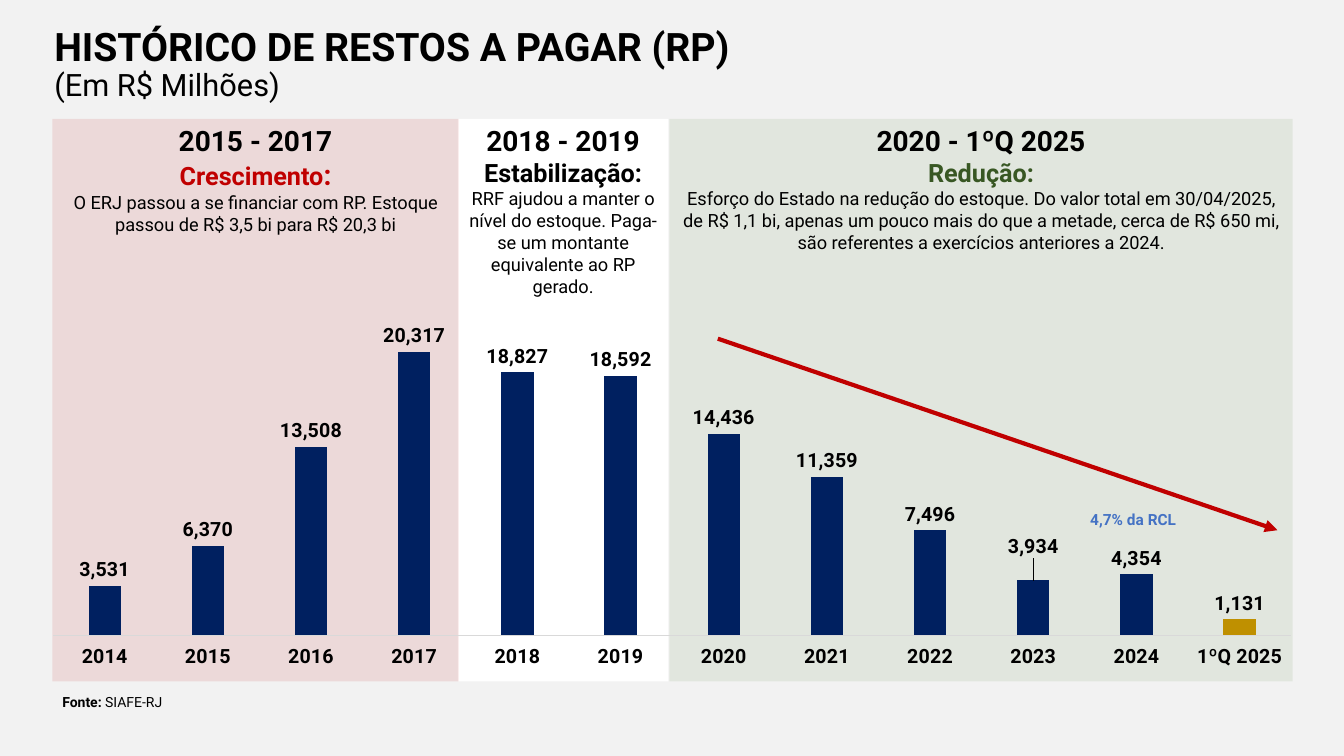
from lxml import etree
from pptx import Presentation
from pptx.chart.data import CategoryChartData
from pptx.dml.color import RGBColor
from pptx.enum.chart import XL_CHART_TYPE as Chart, XL_LABEL_POSITION as LabelPos, XL_TICK_MARK as Tick
from pptx.enum.chart import XL_TICK_LABEL_POSITION as TickPos
from pptx.enum.shapes import MSO_CONNECTOR as Conn, MSO_SHAPE as Shape
from pptx.enum.text import MSO_ANCHOR as Anchor, PP_ALIGN as Align
from pptx.oxml import parse_xml
from pptx.oxml.ns import nsdecls, qn
from pptx.util import Inches, Pt

FONT = "Roboto"
COLORS = {"back": "F2F2F2", "black": "000000", "white": "FFFFFF", "green": "548235",
          "dark_green": "385723", "red": "C00000", "navy": "002060", "gold": "BF9000",
          "blue": "4472C4", "axis": "D9D9D9"}

PANEL_TOP, PANEL_HEIGHT = 1.18, 5.58
PANELS = [
    dict(left=6.64, width=6.18, fill="green", alpha=10, period="2020 - 1ºQ 2025",
         heading=[("Redução:", 18)], color="dark_green",
         body="Esforço do Estado na redução do estoque. Do valor total em 30/04/2025, de R$ 1,1 bi, "
              "apenas um pouco mais do que a metade, cerca de R$ 650 mi, são referentes a "
              "exercícios anteriores a 2024."),
    dict(left=4.54, width=2.09, fill="white", alpha=100, period="2018 - 2019",
         heading=[("Estabilização:", 18)], color="black",
         body="RRF ajudou a manter o nível do estoque. Paga-se um montante equivalente ao RP gerado."),
    dict(left=0.52, width=4.03, fill="red", alpha=10, period="2015 - 2017",
         heading=[("Crescimento", 18), (":", 20)], color="red",
         body="O ERJ passou a se financiar com RP. Estoque passou de R$ 3,5 bi para R$ 20,3 bi"),
]
TITLE = [("HISTÓRICO DE RESTOS A PAGAR (RP)", 28, True), ("(Em R$ Milhões)", 22, False)]
SOURCE = [("Fonte: ", True), ("SIAFE-RJ", False)]
NOTE = "4,7% da RCL"
STOCK = {"2014": 3531, "2015": 6370, "2016": 13508, "2017": 20317, "2018": 18827, "2019": 18592,
         "2020": 14436, "2021": 11359, "2022": 7496, "2023": 3934, "2024": 4354, "1ºQ 2025": 1131}
RAISED_LABEL, RAISE = "2023", -0.04
PLOT_AREA = {"x": 0.007, "y": 0.051, "w": 0.992, "h": 0.801}


def rgb(name):
    return RGBColor.from_string(COLORS[name])


def style(font, size, color="black", bold=True):
    font.name, font.size, font.bold = FONT, Pt(size), bold
    font.color.rgb = rgb(color)


def add_run(p, text, size=14, color="black", bold=True):
    r = p.add_run()
    r.text = text
    style(r.font, size, color, bold)


def add_box(s, *place):
    tf = s.shapes.add_textbox(*map(Inches, place)).text_frame
    tf.word_wrap = True
    return tf


def add_panel(s, left, width, fill, alpha, period, heading, color, body):
    sp = s.shapes.add_shape(Shape.RECTANGLE, *map(Inches, (left, PANEL_TOP, width, PANEL_HEIGHT)))
    sp.shadow.inherit = False
    sp.line.fill.background()
    sp.fill.solid()
    sp.fill.fore_color.rgb = rgb(fill)
    if alpha < 100:
        tint = sp._element.spPr.find(".//" + qn("a:srgbClr"))
        etree.SubElement(tint, qn("a:alpha"), val=str(alpha * 1000))
    tf = sp.text_frame
    tf.word_wrap, tf.vertical_anchor = True, Anchor.TOP
    p = tf.paragraphs[0]
    p.alignment = Align.CENTER
    add_run(p, period, size=20)
    p = tf.add_paragraph()
    p.alignment = Align.CENTER
    for text, size in heading:
        add_run(p, text, size=size, color=color)
    p.add_line_break()
    add_run(p, body, size=13, bold=False)


def add_layout(before, values, inner=False):
    layout = parse_xml(f'<c:layout {nsdecls("c")}><c:manualLayout/></c:layout>')
    if inner:
        etree.SubElement(layout[0], qn("c:layoutTarget"), val="inner")
        for side in "xy":
            etree.SubElement(layout[0], qn(f"c:{side}Mode"), val="edge")
    for key, value in values.items():
        etree.SubElement(layout[0], qn(f"c:{key}"), val=str(value))
    before.addprevious(layout)


def add_stock_chart(s):
    data = CategoryChartData(number_format="#,##0")
    data.categories = list(STOCK)
    data.add_series("Series 1", list(STOCK.values()))
    place = map(Inches, (0.44, 2.62, 12.38, 4.32))
    chart = s.shapes.add_chart(Chart.COLUMN_CLUSTERED, *place, data).chart
    chart.has_legend = chart.has_title = False
    style(chart.font, 14)

    axis = chart.category_axis
    axis.major_tick_mark = axis.minor_tick_mark = Tick.NONE
    axis.tick_label_position = TickPos.LOW
    axis.format.line.color.rgb = rgb("axis")
    axis.format.line.width = Pt(0.75)
    style(axis.tick_labels.font, 14)
    values = chart.value_axis
    values.visible = values.has_major_gridlines = False
    values.minimum_scale, values.maximum_scale = 0, 25000

    plot = chart.plots[0]
    plot.gap_width, plot.vary_by_categories = 219, False
    series = plot.series[0]
    series.format.fill.solid()
    series.format.fill.fore_color.rgb = rgb("navy")
    last = series.points[len(STOCK) - 1].format.fill
    last.solid()
    last.fore_color.rgb = rgb("gold")
    labels = series.data_labels
    labels.show_value, labels.position = True, LabelPos.OUTSIDE_END
    labels.number_format, labels.number_format_is_linked = "#,##0", False
    style(labels.font, 14)
    raised = series.points[list(STOCK).index(RAISED_LABEL)].data_label
    style(raised.font, 14)
    raised.position = LabelPos.OUTSIDE_END
    label = series._element.find(".//" + qn("c:dLbl"))
    add_layout(label[1], {"x": 0, "y": RAISE})

    space = chart._chartSpace
    area = space.find(".//" + qn("c:plotArea"))
    for layout in area.findall(qn("c:layout")):
        area.remove(layout)
    add_layout(area[0], PLOT_AREA, inner=True)
    clear = f'<c:spPr {nsdecls("c", "a")}><a:noFill/><a:ln><a:noFill/></a:ln></c:spPr>'
    area.append(parse_xml(clear))
    space.find(qn("c:chart")).addnext(parse_xml(clear))


def main():
    """Build the slide on the history of unpaid commitments."""
    prs = Presentation()
    prs.slide_width, prs.slide_height = Inches(13.33), Inches(7.5)
    s = prs.slides.add_slide(prs.slide_layouts[6])
    s.background.fill.solid()
    s.background.fill.fore_color.rgb = rgb("back")

    for panel in PANELS:
        add_panel(s, **panel)

    tf = add_box(s, 0.44, 0.16, 9.55, 0.97)
    tf.vertical_anchor = Anchor.MIDDLE
    for i, (text, size, bold) in enumerate(TITLE):
        p = tf.add_paragraph() if i else tf.paragraphs[0]
        p.line_spacing = 0.9
        add_run(p, text, size=size, bold=bold)

    p = add_box(s, 0.52, 6.83, 5.36, 0.27).paragraphs[0]
    for text, bold in SOURCE:
        add_run(p, text, size=10, bold=bold)

    arrow = s.shapes.add_connector(Conn.STRAIGHT, *map(Inches, (7.12, 3.36, 12.67, 5.26)))
    arrow.line.color.rgb = rgb("red")
    arrow.line.width = Pt(3)
    etree.SubElement(arrow.line._get_or_add_ln(), qn("a:tailEnd"), type="triangle")
    etree.SubElement(arrow._element.spPr, qn("a:effectLst"))

    p = add_box(s, 10.66, 5.01, 1.16, 0.29).paragraphs[0]
    p.alignment = Align.CENTER
    add_run(p, NOTE, size=11, color="blue")

    add_stock_chart(s)
    prs.save("out.pptx")


if __name__ == "__main__":
    main()
